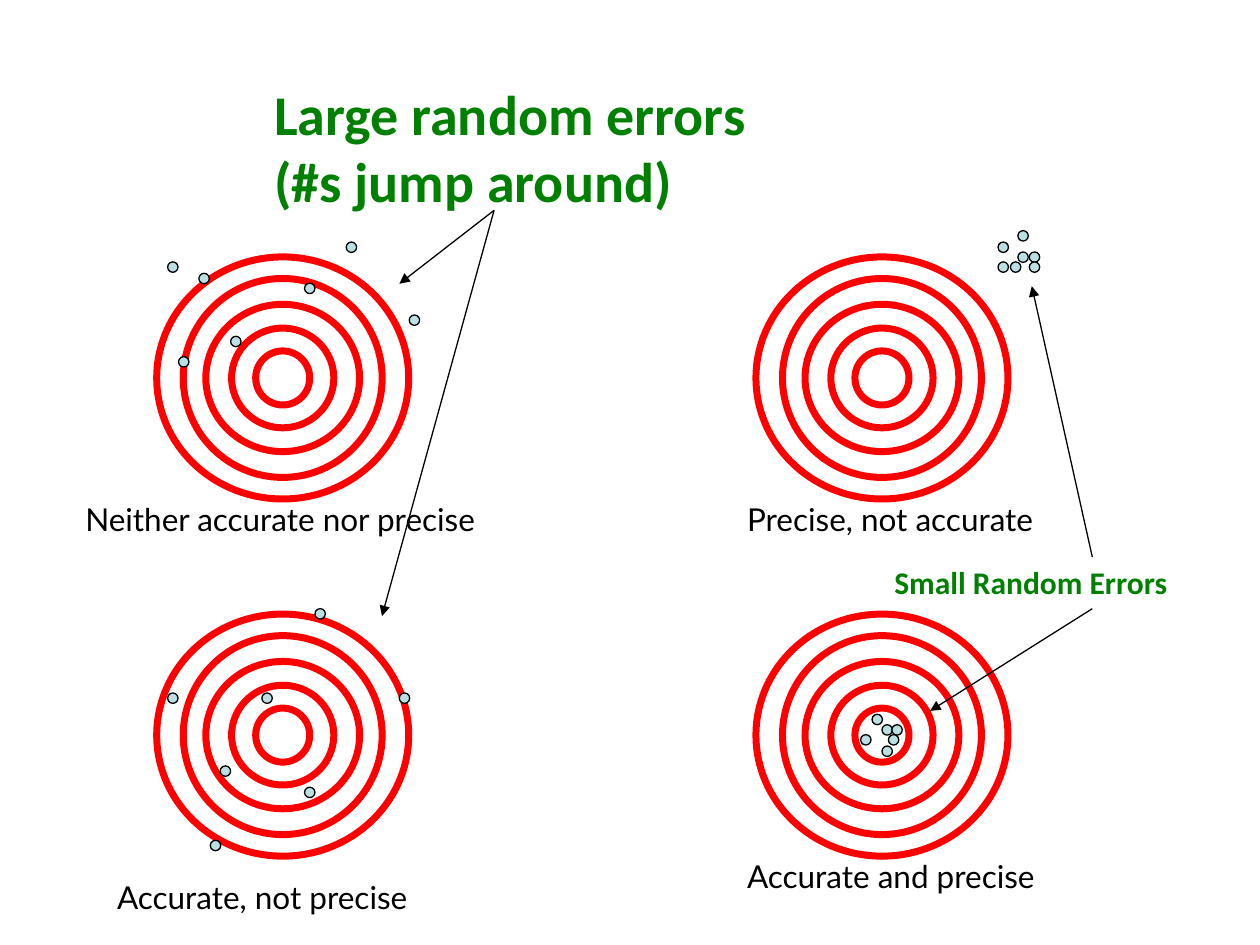
from dataclasses import dataclass

from lxml.etree import SubElement
from pptx import Presentation
from pptx.dml.color import RGBColor
from pptx.enum.shapes import MSO_CONNECTOR, MSO_SHAPE
from pptx.enum.text import MSO_AUTO_SIZE
from pptx.oxml.ns import qn
from pptx.util import Cm, Pt


@dataclass(frozen=True)
class Theme:
    ring: RGBColor = RGBColor(0xFF, 0x00, 0x00)
    dot: RGBColor = RGBColor(0xBB, 0xE0, 0xE3)
    ink: RGBColor = RGBColor(0x00, 0x00, 0x00)
    note: RGBColor = RGBColor(0x00, 0x80, 0x00)
    face: str = "Lato"
    bold_face: str = "Calibri"
    title: int = 32
    body: int = 18
    thick: float = 4
    thin: float = 0.75


THEME = Theme()
SIZE = (25.4, 19.05)
RINGS = [(5.08, 4.88), (4.01, 4.01), (3.1, 2.97), (2.06, 2.01), (1.09, 1.09)]
DOT = 0.21
LEFT, TOP = 3.16, 5.18
STEP_X, STEP_Y = 12.08, 7.2

TARGETS = [
    (0, 0, "Neither accurate nor precise", (-1.69, 4.78, 8.46),
     [(5.09, 1.17), (0.44, 2.01), (3.82, -0.3), (0.22, 0.1),
      (2.98, 0.53), (1.49, 1.6), (0.85, 0.33)]),
    (0, 1, "Accurate, not precise", (-1.05, 5.2, 7.19),
     [(3.19, -0.11), (1.08, 4.56), (2.12, 1.59), (2.98, 3.49),
      (4.89, 1.59), (0.22, 1.59), (1.28, 3.06)]),
    (1, 0, "Precise, not accurate", (-0.43, 4.78, 7.82),
     [(4.88, 0.1), (5.28, -0.53), (5.51, -0.1), (4.88, -0.3),
      (5.28, -0.1), (5.13, 0.1), (5.51, 0.1)]),
    (1, 1, "Accurate and precise", (-0.43, 4.77, 8.89),
     [(2.54, 2.23), (2.74, 2.23), (2.54, 2.66), (2.34, 2.02),
      (2.67, 2.43), (2.11, 2.43)]),
]


def add_text(slide, text, box, size=THEME.body, face=THEME.face,
             color=THEME.ink, bold=False, wrap=True):
    frame = slide.shapes.add_textbox(*map(Cm, box)).text_frame
    frame.word_wrap = wrap
    frame.auto_size = MSO_AUTO_SIZE.SHAPE_TO_FIT_TEXT
    para = frame.paragraphs[0]
    para.text = text
    for run in para.runs:
        font = run.font
        font.name, font.size, font.bold = face, Pt(size), bold
        font.color.rgb = color


def add_disc(slide, box, line, width, fill=None):
    disc = slide.shapes.add_shape(MSO_SHAPE.OVAL, *map(Cm, box))
    disc.shadow.inherit = False
    disc.line.color.rgb = line
    disc.line.width = Pt(width)
    if fill is None:
        disc.fill.background()
    else:
        disc.fill.solid()
        disc.fill.fore_color.rgb = fill


def add_arrow(slide, start, end):
    arrow = slide.shapes.add_connector(
        MSO_CONNECTOR.STRAIGHT, *map(Cm, (*start, *end)))
    arrow.line.color.rgb = THEME.ink
    arrow.line.width = Pt(THEME.thin)
    SubElement(arrow.line._get_or_add_ln(), qn("a:tailEnd"), type="triangle")
    SubElement(arrow._element.spPr, qn("a:effectLst"))


def add_target(slide, box, label, place, dots):
    left, top, width, height = box
    for wide, high in RINGS:
        ring = (left + (width - wide) / 2, top + (height - high) / 2, wide, high)
        add_disc(slide, ring, THEME.ring, THEME.thick)
    for x, y in dots:
        add_disc(slide, (left + x, top + y, DOT, DOT),
                 THEME.ink, THEME.thin, THEME.dot)
    x, y, wide = place
    add_text(slide, label, (left + x, top + y, wide, 1.02))


def add_note(slide, text, box, arrows, **style):
    left, top = box[:2]
    add_text(slide, text, box, face=THEME.bold_face,
             color=THEME.note, bold=True, **style)
    for (x1, y1), (x2, y2) in arrows:
        add_arrow(slide, (left + x1, top + y1), (left + x2, top + y2))


def main():
    deck = Presentation()
    deck.slide_width, deck.slide_height = map(Cm, SIZE)
    slide = deck.slides.add_slide(deck.slide_layouts[6])
    for col, row, label, place, dots in TARGETS:
        box = (LEFT + col * STEP_X, TOP + row * STEP_Y, *RINGS[0])
        add_target(slide, box, label, place, dots)
    add_note(slide, "Large random errors\n(#s jump around)",
             (5.28, 1.47, 13.13, 2.97),
             [((4.68, 2.77), (2.77, 4.25)), ((4.68, 2.77), (2.42, 10.95))],
             size=THEME.title)
    add_note(slide, "Small Random Errors", (17.78, 11.23, 6.07, 1.02),
             [((4.24, 0), (3.02, -5.46)), ((4.24, 1.04), (0.97, 3.1))],
             wrap=False)
    deck.save("out.pptx")


if __name__ == "__main__":
    main()
